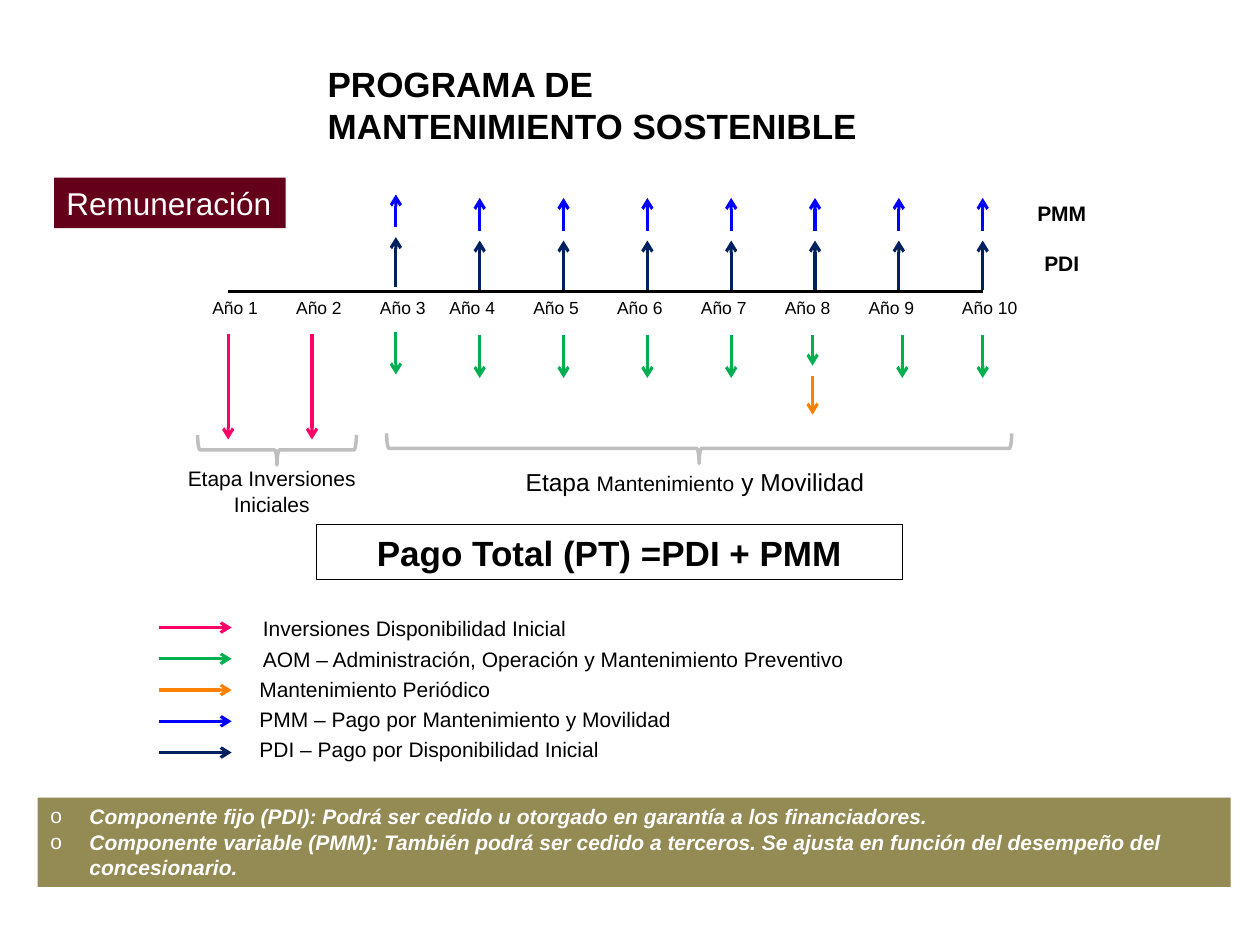
from lxml.etree import SubElement
from pptx import Presentation
from pptx.dml.color import RGBColor
from pptx.enum.shapes import MSO_CONNECTOR as Connector, MSO_SHAPE as Shape
from pptx.enum.text import MSO_ANCHOR as Anchor, MSO_AUTO_SIZE as AutoSize, PP_ALIGN as Align
from pptx.oxml.ns import qn
from pptx.util import Cm, Pt

COLORS = {
    "black": "000000", "white": "FFFFFF", "olive": "948A54", "wine": "65001A", "gray": "BFBFBF",
    "investment": "FF0066", "aom": "00B050", "periodic": "FF8000", "pmm": "0000FF", "pdi": "002060",
}
LEGEND = [
    ("investment", "Inversiones Disponibilidad Inicial", 5.05),
    ("aom", "AOM – Administración, Operación y Mantenimiento Preventivo", 5.05),
    ("periodic", "Mantenimiento Periódico", 4.98),
    ("pmm", "PMM – Pago por Mantenimiento y Movilidad", 4.98),
    ("pdi", "PDI – Pago por Disponibilidad Inicial", 4.98),
]
COMPONENTS = [
    "Componente fijo (PDI): Podrá ser cedido u otorgado en garantía a los financiadores.",
    "Componente variable (PMM): También podrá ser cedido a terceros. "
    "Se ajusta en función del desempeño del concesionario.",
]
AXIS_START, YEAR_STEP, AXIS_Y = 4.6, 1.69, 5.87


def rgb(name):
    """Return the named colour."""
    return RGBColor.from_string(COLORS[name])


def write(paragraph, text, size=12, color="black", bold=False, italic=False, align=Align.LEFT):
    """Add a formatted run to a paragraph."""
    paragraph.alignment = align
    run = paragraph.add_run()
    run.text = text
    font = run.font
    font.name, font.size, font.bold, font.italic = "Arial", Pt(size), bold, italic
    font.color.rgb = rgb(color)


def place(shape, left, top, width, height):
    """Move and size a shape in centimetres."""
    shape.left, shape.top, shape.width, shape.height = map(Cm, (left, top, width, height))


def add_label(slide, box, text="", side_inset=0.25, **text_format):
    """Add a wrapping text box and return its first paragraph."""
    frame = slide.shapes.add_textbox(*map(Cm, box)).text_frame
    frame.word_wrap = True
    frame.margin_left = frame.margin_right = Cm(side_inset)
    if text:
        write(frame.paragraphs[0], text, **text_format)
    return frame.paragraphs[0]


def add_shape(slide, kind, box, fill=None, line=None, width=0.75):
    """Add a preset shape with optional fill and outline."""
    shape = slide.shapes.add_shape(kind, *map(Cm, box))
    shape.shadow.inherit = False
    if fill:
        shape.fill.solid()
        shape.fill.fore_color.rgb = rgb(fill)
    else:
        shape.fill.background()
    if line:
        shape.line.color.rgb = rgb(line)
        shape.line.width = Pt(width)
    else:
        shape.line.fill.background()
    return shape


def add_line(slide, start, end, color, width=1.75, arrow=True):
    """Add a straight line, by default with an arrowhead at its end."""
    line = slide.shapes.add_connector(Connector.STRAIGHT, *map(Cm, (*start, *end)))
    line.line.color.rgb = rgb(color)
    line.line.width = Pt(width)
    if arrow:
        SubElement(line.line._get_or_add_ln(), qn("a:tailEnd"), type="arrow")
    SubElement(line._element.spPr, qn("a:effectLst"))


def add_vertical_arrow(slide, x, start_y, end_y, color):
    """Add a vertical arrow at one position on the time axis."""
    add_line(slide, (x, start_y), (x, end_y), color)


def add_brace(slide, box):
    """Add a brace that points down, given its unrotated frame."""
    add_shape(slide, Shape.LEFT_BRACE, box, line="gray", width=2).rotation = 270


def fill_title(title):
    """Place and write the slide title."""
    place(title, 6.35, 0.51, 11.46, 3.18)
    frame = title.text_frame
    frame.auto_size = AutoSize.NONE
    frame.vertical_anchor = Anchor.MIDDLE
    write(frame.paragraphs[0], "PROGRAMA DE MANTENIMIENTO SOSTENIBLE", size=20, bold=True)


def fill_components(body):
    """Write the bulleted list on its olive band."""
    place(body, 0.76, 16.08, 24.05, 1.8)
    body.fill.solid()
    body.fill.fore_color.rgb = rgb("olive")
    frame = body.text_frame
    frame.auto_size = AutoSize.NONE
    frame.vertical_anchor = Anchor.TOP
    for index, text in enumerate(COMPONENTS):
        paragraph = frame.add_paragraph() if index else frame.paragraphs[0]
        properties = paragraph._p.get_or_add_pPr()
        properties.set("marL", str(Cm(0.79)))
        properties.set("indent", str(Cm(-0.79)))
        SubElement(properties, qn("a:buFont"), typeface="Arial")
        SubElement(properties, qn("a:buChar"), char="o")
        paragraph.space_before = Pt(0)
        write(paragraph, text, color="white", bold=True, italic=True)


def add_year(slide, year):
    """Add the label and payment arrows of one year."""
    x = AXIS_START + YEAR_STEP * (year - 1)
    label_shift = 1.14 if 4 <= year <= 9 else 0.85
    add_label(slide, (x - label_shift, AXIS_Y, 1.98, 0.69), f"Año {year}",
              side_inset=0.1, size=10, align=Align.CENTER)
    if year <= 2:
        add_vertical_arrow(slide, x, 6.73, 8.86, "investment")
        return
    lift = 0.07 if year == 3 else 0
    add_vertical_arrow(slide, x, 5.85 - lift, 4.85 - lift, "pdi")
    add_vertical_arrow(slide, x, 4.65 - lift, 3.99 - lift, "pmm")
    cost_x = x + {8: -0.05, 9: 0.07}.get(year, 0)
    add_vertical_arrow(slide, cost_x, 6.76 - lift, 7.37 if year == 8 else 7.62 - lift, "aom")
    if year == 8:
        add_vertical_arrow(slide, cost_x, 7.57, 8.36, "periodic")


def add_stages(slide):
    """Add the braces and names of the two stages."""
    add_brace(slide, (5.28, 7.47, 0.61, 3.2))
    add_brace(slide, (13.79, 2.74, 0.61, 12.6))
    add_label(slide, (3.18, 9.27, 4.6, 1.27), "Etapa Inversiones Iniciales", align=Align.CENTER)
    paragraph = add_label(slide, (8.23, 9.3, 11.56, 0.86))
    for text, size in (("Etapa ", 14), ("Mantenimiento", 12), (" y Movilidad", 14)):
        write(paragraph, text, size=size, align=Align.CENTER)


def add_legend(slide):
    """Add the arrow key with its explanations."""
    for index, (color, text, left) in enumerate(LEGEND):
        y = 12.65 + 0.63 * index
        add_line(slide, (3.2, y), (4.67, y), color)
        add_label(slide, (left, 12.29 + 0.61 * index, 14, 0.76), text)


def main():
    """Build and save the slide."""
    presentation = Presentation()
    presentation.slide_width, presentation.slide_height = Cm(25.4), Cm(19.05)
    slide = presentation.slides.add_slide(presentation.slide_layouts[1])
    fill_components(slide.placeholders[1])
    fill_title(slide.shapes.title)

    add_line(slide, (AXIS_START, AXIS_Y), (AXIS_START + 9 * YEAR_STEP, AXIS_Y), "black",
             width=1.5, arrow=False)
    for year in range(1, 11):
        add_year(slide, year)
    for text, top in (("PMM", 3.91), ("PDI", 4.93)):
        add_label(slide, (20.4, top, 2.01, 0.76), text, bold=True, align=Align.CENTER)
    add_stages(slide)
    add_legend(slide)

    total = add_shape(slide, Shape.RECTANGLE, (6.38, 10.57, 11.81, 1.12), line="black")
    write(total.text_frame.paragraphs[0], "Pago Total (PT) =PDI + PMM",
          size=20, bold=True, align=Align.CENTER)
    heading = add_shape(slide, Shape.RECTANGLE, (1.09, 3.58, 4.67, 1.02), fill="wine")
    heading.text_frame.word_wrap = False
    write(heading.text_frame.paragraphs[0], "Remuneración", size=18, color="white")
    presentation.save("out.pptx")


if __name__ == "__main__":
    main()
